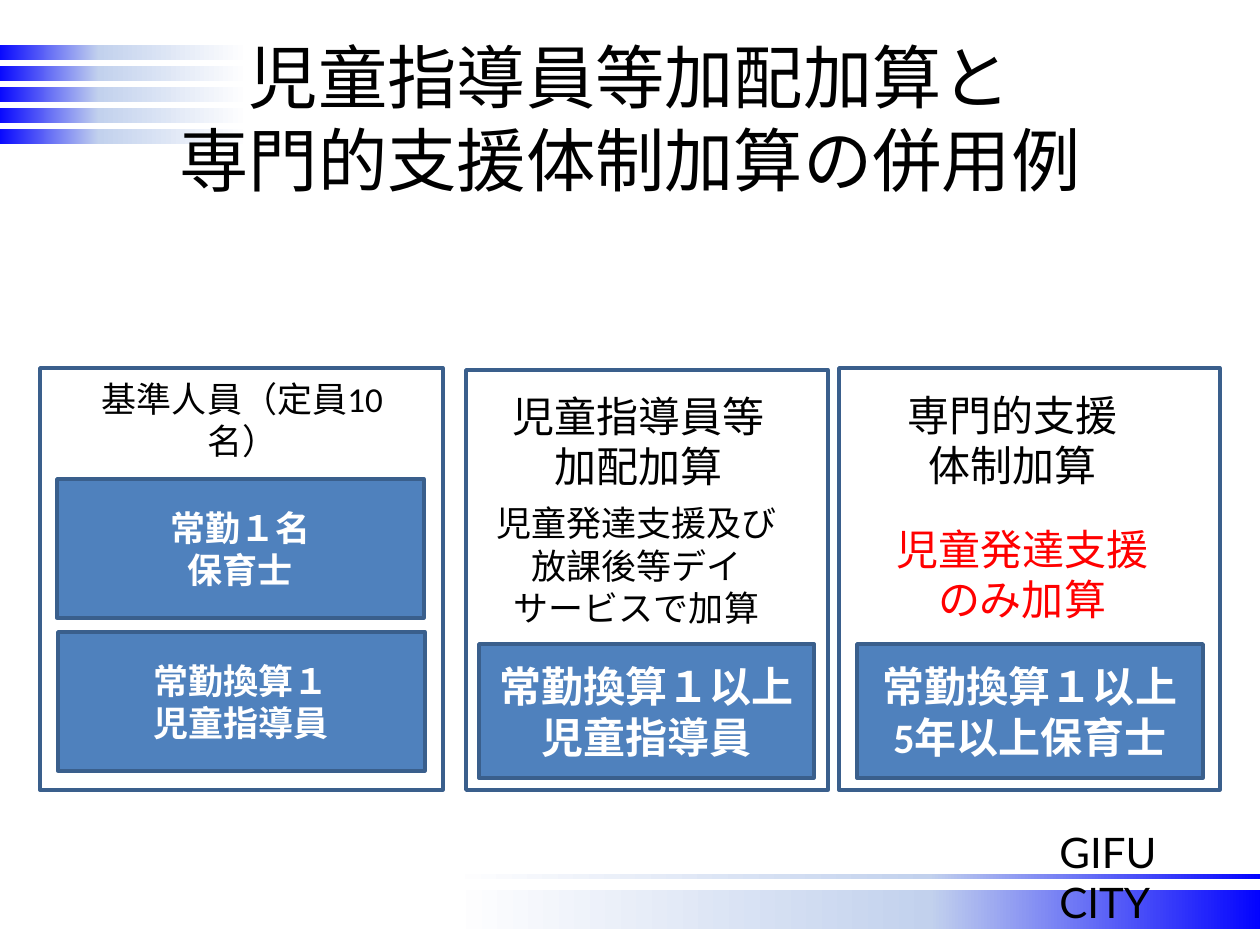
from lxml.etree import SubElement
from pptx import Presentation
from pptx.dml.color import RGBColor as Rgb
from pptx.enum.shapes import MSO_SHAPE as Geo
from pptx.enum.text import MSO_ANCHOR as Anchor, MSO_AUTO_SIZE as Fit, PP_ALIGN as Align
from pptx.oxml.ns import qn
from pptx.util import Emu, Pt

HUE = {
    "ink": "000000", "white": "FFFFFF", "red": "FF0000",
    "fill": "4F81BD", "edge": "3A5F8C", "blue": "0000FF", "pale": "C2D1ED",
}
FADE = [(0, "blue"), (35, "pale"), (85, "white")]


def px(n):
    return Emu(round(n * 914400 / 126))


class Deck:
    font, cjk = "Calibri", "Noto Sans CJK JP"

    def __init__(self, wide, high):
        self.prs = Presentation()
        self.prs.slide_width, self.prs.slide_height = px(wide), px(high)
        self.slide = self.prs.slides.add_slide(self.prs.slide_layouts[5])
        self.shapes = self.slide.shapes

    def run(self, para, text, size, hue, bold=False, font=None):
        run = para.add_run()
        run.text = text
        run.font.size, run.font.bold = Pt(size), bold
        run.font.name = font or self.font
        run.font.color.rgb = Rgb.from_string(HUE[hue])

    def words(self, shape, lines, size, hue, bold=False):
        frame = shape.text_frame
        frame.word_wrap = True
        frame.vertical_anchor = Anchor.MIDDLE
        for i, line in enumerate(lines):
            para = frame.add_paragraph() if i else frame.paragraphs[0]
            para.alignment = Align.CENTER
            self.run(para, line, size, hue, bold)

    def rect(self, box):
        shape = self.shapes.add_shape(Geo.RECTANGLE, *map(px, box))
        shape.shadow.inherit = False
        return shape

    def bar(self, box, turn=0):
        shape = self.rect(box)
        shape.rotation = turn
        shape.line.fill.background()
        shape.fill.gradient()
        shape.fill.gradient_angle = 0
        stops = shape._element.spPr.find(qn("a:gradFill")).find(qn("a:gsLst"))
        for old in list(stops):
            stops.remove(old)
        for pos, hue in FADE:
            stop = SubElement(stops, qn("a:gs"), pos=str(pos * 1000))
            SubElement(stop, qn("a:srgbClr"), val=HUE[hue])

    def frame(self, box, fill=None):
        shape = self.rect(box)
        if fill:
            shape.fill.solid()
            shape.fill.fore_color.rgb = Rgb.from_string(HUE[fill])
        else:
            shape.fill.background()
        shape.line.color.rgb = Rgb.from_string(HUE["edge"])
        shape.line.width = Pt(2)
        return shape

    def block(self, box, lines, size):
        self.words(self.frame(box, "fill"), lines, size, "white", True)

    def label(self, box, lines, size, hue="ink"):
        shape = self.shapes.add_textbox(*map(px, box))
        self.words(shape, lines, size, hue)

    def mark(self, box, text):
        frame = self.shapes.add_textbox(*map(px, box)).text_frame
        frame.word_wrap = True
        self.run(frame.paragraphs[0], text, 24, "ink", font="Lato")

    def title(self, box, lines):
        shape = self.shapes.title
        shape.left, shape.top, shape.width, shape.height = map(px, box)
        frame = shape.text_frame
        frame.auto_size, frame.vertical_anchor = Fit.NONE, Anchor.MIDDLE
        para = frame.paragraphs[0]
        para.alignment = Align.CENTER
        for i, line in enumerate(lines):
            if i:
                para.add_line_break()
            self.run(para, line, 39.6, "ink", font=self.cjk)
        # Bring the title in front of the bars
        self.shapes._spTree.append(shape._element)


def main():
    deck = Deck(1260, 945)

    # Fading bars and city name
    deck.bar((307, 890, 958, 39), 180)
    for row in range(5):
        deck.bar((-5, 45 + 21 * row, 297, 15))
    deck.bar((306, 874, 958, 5), 180)
    deck.mark((1047, 820, 202, 63), "GIFU CITY")

    # Base staff
    deck.frame((40, 368, 403, 422))
    deck.label((59, 388, 367, 64), ["基準人員（定員10名）"], 20)
    deck.block((57, 479, 367, 139), ["常勤１名", "保育士"], 20)
    deck.block((58, 632, 367, 139), ["常勤換算１", "児童指導員"], 20)

    # Added instructors
    deck.frame((466, 370, 362, 420))
    deck.label((483, 401, 311, 79), ["児童指導員等", "加配加算"], 24)
    deck.label((472, 515, 329, 100),
               ["児童発達支援及び", "放課後等デイ", "サービスで加算"], 20)
    deck.block((479, 644, 335, 134), ["常勤換算１以上", "児童指導員"], 24)

    # Expert support
    deck.frame((839, 368, 381, 422))
    deck.label((876, 401, 273, 78), ["専門的支援", "体制加算"], 24)
    deck.block((857, 644, 346, 134), ["常勤換算１以上", "5年以上保育士"], 24)
    deck.label((881, 544, 282, 60), ["児童発達支援", "のみ加算"], 24, "red")

    # Title
    deck.title((63, 38, 1134, 158),
               ["児童指導員等加配加算と", "専門的支援体制加算の併用例"])
    deck.prs.save("out.pptx")


if __name__ == "__main__":
    main()
